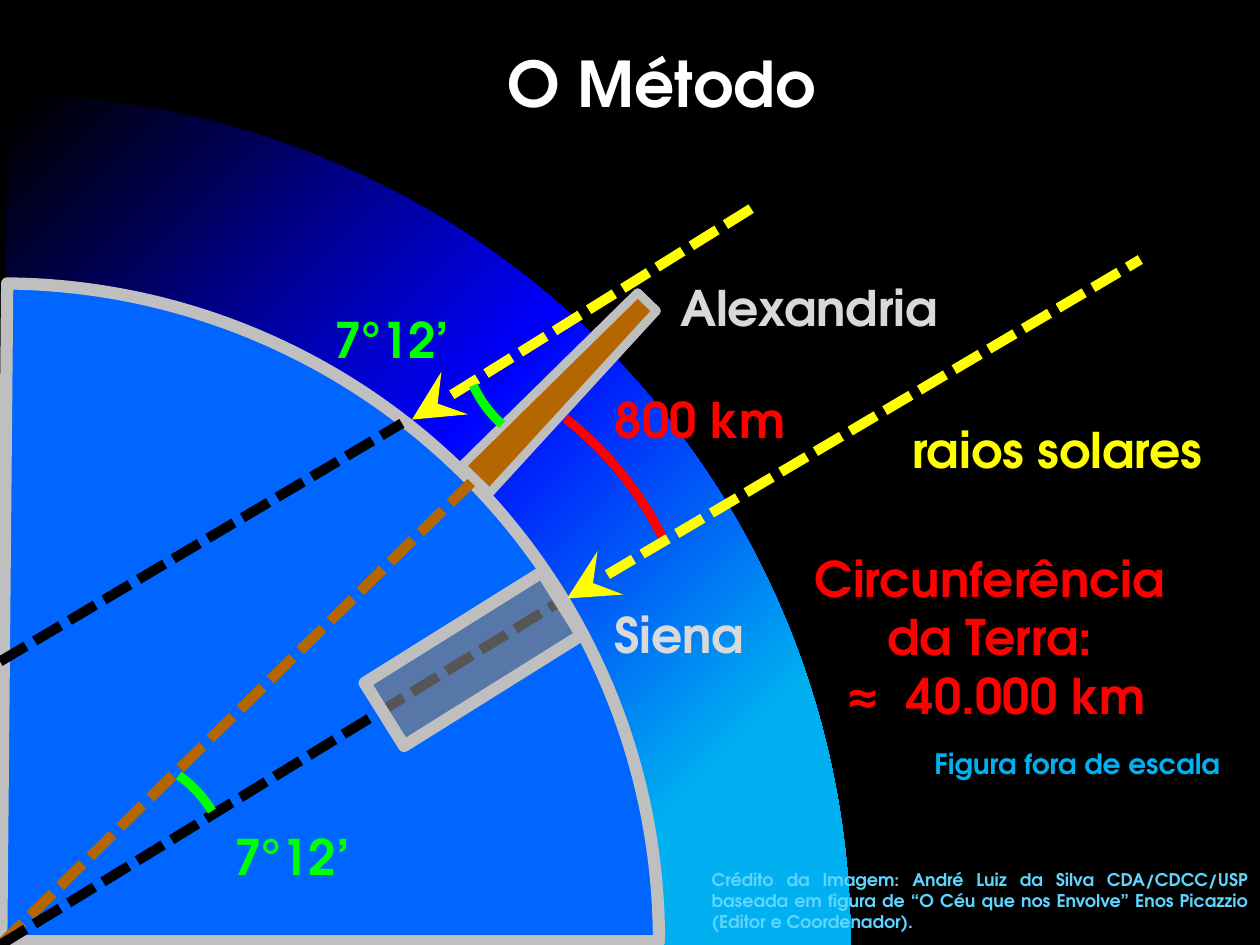
"""Build the slide on measuring the Earth by the sun's rays."""
import dataclasses
import lxml.etree
import pptx
import pptx.dml.color
import pptx.enum.dml
import pptx.enum.shapes
import pptx.enum.text
import pptx.oxml
import pptx.oxml.ns
import pptx.util

Inches = pptx.util.Inches
Kind = pptx.enum.shapes.MSO_SHAPE
Align = pptx.enum.text.PP_ALIGN
Fit = pptx.enum.text.MSO_AUTO_SIZE
FONT = "TeX Gyre Adventor"
MONO = "DejaVu Sans Mono"
GREEN, RED, YELLOW, GREY = "00FF00", "FF0000", "FFFF00", "BFBFBF"
BROWN, BLACK, PALE = "B46700", "000000", "D9D9D9"
SKY = [(34, "00B0F0"), (52, "0000FF"), (74, "000000")]


@dataclasses.dataclass
class Form:
    kind: Kind
    box: tuple
    turn: float
    adj: tuple
    fill: str = ""
    line: str = ""
    wide: float = 5.25
    flip: bool = False
    alpha: int = 100


@dataclasses.dataclass
class Ray:
    start: tuple
    end: tuple
    hue: str
    wide: float = 5.75
    head: bool = False


@dataclasses.dataclass
class Label:
    box: tuple
    rows: list
    hue: str
    size: int = 28
    align: Align = Align.CENTER
    wrap: bool = True


def arc(box: tuple, turn: float, adj: tuple, hue: str) -> Form:
    return Form(Kind.ARC, box, turn, adj, line=hue, flip=True)


QUARTER = (108.311, 162)
ANGLE = (193.126, 207.268)
GROUND = [
    Form(Kind.PIE, (-6.75, 0.75, 13.5, 13.5), 90, QUARTER),
    Form(Kind.PIE, (-5.21, 2.25, 10.44, 10.44), 90, QUARTER, "0066FF", GREY, 7),
]
RAYS = [
    Ray((0, 7.5), (3.74, 3.83), BROWN, 6),
    Ray((0, 7.5), (4.45, 4.77), BLACK),
    Ray((0, 5.25), (3.19, 3.36), BLACK),
    Ray((3.27, 3.33), (6.02, 1.62), YELLOW, head=True),
]
MARKS = [
    Form(Kind.TRAPEZOID, (4.3, 2.12, 0.31, 1.96), 44, (0.165,), BROWN, GREY, 5),
    arc((3.66, 1.72, 1.9, 1.87), 296.6, ANGLE, GREEN),
    arc((-0.07, 6, 1.9, 1.87), 110, ANGLE, GREEN),
    Form(Kind.TRAPEZOID, (3.46, 4.4, 0.59, 1.66), 238, (0,), "808080", GREY, 7, alpha=68),
    arc((0.17, 2.44, 5.11, 5.6), 103.6, (182.864, 198.641), RED),
]
SUN = Ray((4.5, 4.75), (9.05, 2.06), YELLOW, head=True)
CREDIT = ("Crédito da Imagem: André Luiz da Silva CDA/CDCC/USP baseada em figura "
          "de “O Céu que nos Envolve” Enos Picazzio (Editor e Coordenador). ")
LABELS = [
    Label((1.69, 6.51, 1.26, 0.57), [[("7°12’", FONT)]], GREEN),
    Label((2.48, 2.41, 1.26, 0.57), [[("7°12’", FONT)]], GREEN),
    Label((4.69, 3.04, 1.73, 0.57), [[("800 km", FONT)]], RED),
    Label((5.16, 2.15, 2.52, 0.57), [[("Alexandria", FONT)]], PALE),
    Label((4.13, 4.75, 2.52, 0.57), [[("Siena", FONT)]], PALE),
    Label((6.02, 4.3, 3.78, 1.51), [[("Circunferência ", FONT)], [("da Terra: ", FONT)],
                                    [("≈ ", MONO), ("40.000 km", FONT)]], RED),
    Label((7.29, 5.88, 2.52, 0.37), [[("Figura fora de escala", FONT)]], "00B0F0", 16, wrap=False),
    Label((7.05, 3.28, 2.68, 0.57), [[("raios solares", FONT)]], YELLOW),
    Label((5.55, 6.85, 4.45, 0.61), [[(CREDIT, FONT)]], "5DD5FF", 10, Align.JUSTIFY),
]


def color(hue: str) -> pptx.dml.color.RGBColor:
    return pptx.dml.color.RGBColor.from_string(hue)


def node(root, tag: str, **attrs: str):
    return lxml.etree.SubElement(root, pptx.oxml.ns.qn(tag), attrs)


def glow(shape) -> None:
    space = pptx.oxml.ns.nsdecls("a")
    stops = "".join(f'<a:gs pos="{pos * 1000}"><a:srgbClr val="{hue}"/></a:gs>' for pos, hue in SKY)
    fill = pptx.oxml.parse_xml(
        f'<a:gradFill {space} rotWithShape="0"><a:gsLst>{stops}</a:gsLst><a:path path="circle">'
        '<a:fillToRect l="100000" t="100000"/></a:path></a:gradFill>')
    shape._element.spPr.find(pptx.oxml.ns.qn("a:prstGeom")).addnext(fill)


def draw(slide, form: Form):
    shape = slide.shapes.add_shape(form.kind, *map(Inches, form.box))
    shape.shadow.inherit = False
    shape.rotation = form.turn
    for pos, value in enumerate(form.adj):
        shape.adjustments[pos] = value
    if form.flip:
        shape._element.spPr.xfrm.set("flipH", "1")
    if form.fill:
        shape.fill.solid()
        shape.fill.fore_color.rgb = color(form.fill)
        if form.alpha < 100:
            tint = shape._element.spPr.find(".//" + pptx.oxml.ns.qn("a:srgbClr"))
            node(tint, "a:alpha", val=str(form.alpha * 1000))
    else:
        shape.fill.background()
    if form.line:
        shape.line.color.rgb = color(form.line)
        shape.line.width = pptx.util.Pt(form.wide)
    else:
        shape.line.fill.background()
    return shape


def cast(slide, ray: Ray) -> None:
    straight = pptx.enum.shapes.MSO_CONNECTOR.STRAIGHT
    line = slide.shapes.add_connector(straight, *map(Inches, ray.start + ray.end))
    line.line.color.rgb = color(ray.hue)
    line.line.width = pptx.util.Pt(ray.wide)
    line.line.dash_style = pptx.enum.dml.MSO_LINE.SQUARE_DOT
    props = line._element.spPr
    if ray.head:
        node(props.find(pptx.oxml.ns.qn("a:ln")), "a:headEnd", type="stealth", w="lg", len="lg")
    node(props, "a:effectLst")


def add(para, text: str, font: str, size: int, hue: str) -> None:
    run = para.add_run()
    run.text = text
    run.font.name = font
    run.font.size = pptx.util.Pt(size)
    run.font.bold = True
    run.font.color.rgb = color(hue)


def write(slide, label: Label) -> None:
    frame = slide.shapes.add_textbox(*map(Inches, label.box)).text_frame
    frame.word_wrap = label.wrap
    frame.auto_size = Fit.SHAPE_TO_FIT_TEXT
    for pos, row in enumerate(label.rows):
        para = frame.add_paragraph() if pos else frame.paragraphs[0]
        para.alignment = label.align
        for text, font in row:
            add(para, text, font, label.size, label.hue)


def head(slide) -> None:
    title = slide.shapes.title
    title.left, title.top, title.width, title.height = map(Inches, (0, 0.3, 10, 1.25))
    frame = title.text_frame
    frame.auto_size = Fit.NONE
    frame.vertical_anchor = pptx.enum.text.MSO_ANCHOR.TOP
    para = frame.paragraphs[0]
    para.alignment = Align.CENTER
    add(para, "\tO Método", FONT, 36, "FFFFFF")


def main() -> None:
    deck = pptx.Presentation()
    deck.slide_width, deck.slide_height = Inches(10), Inches(7.5)
    slide = deck.slides.add_slide(deck.slide_layouts[5])
    slide.background.fill.solid()
    slide.background.fill.fore_color.rgb = color(BLACK)
    head(slide)
    sky, _ = [draw(slide, form) for form in GROUND]
    sky._element.spPr.remove(sky._element.spPr.find(pptx.oxml.ns.qn("a:noFill")))
    glow(sky)
    for ray in RAYS:
        cast(slide, ray)
    for form in MARKS:
        draw(slide, form)
    cast(slide, SUN)
    for label in LABELS:
        write(slide, label)
    deck.save("out.pptx")


if __name__ == "__main__":
    main()
